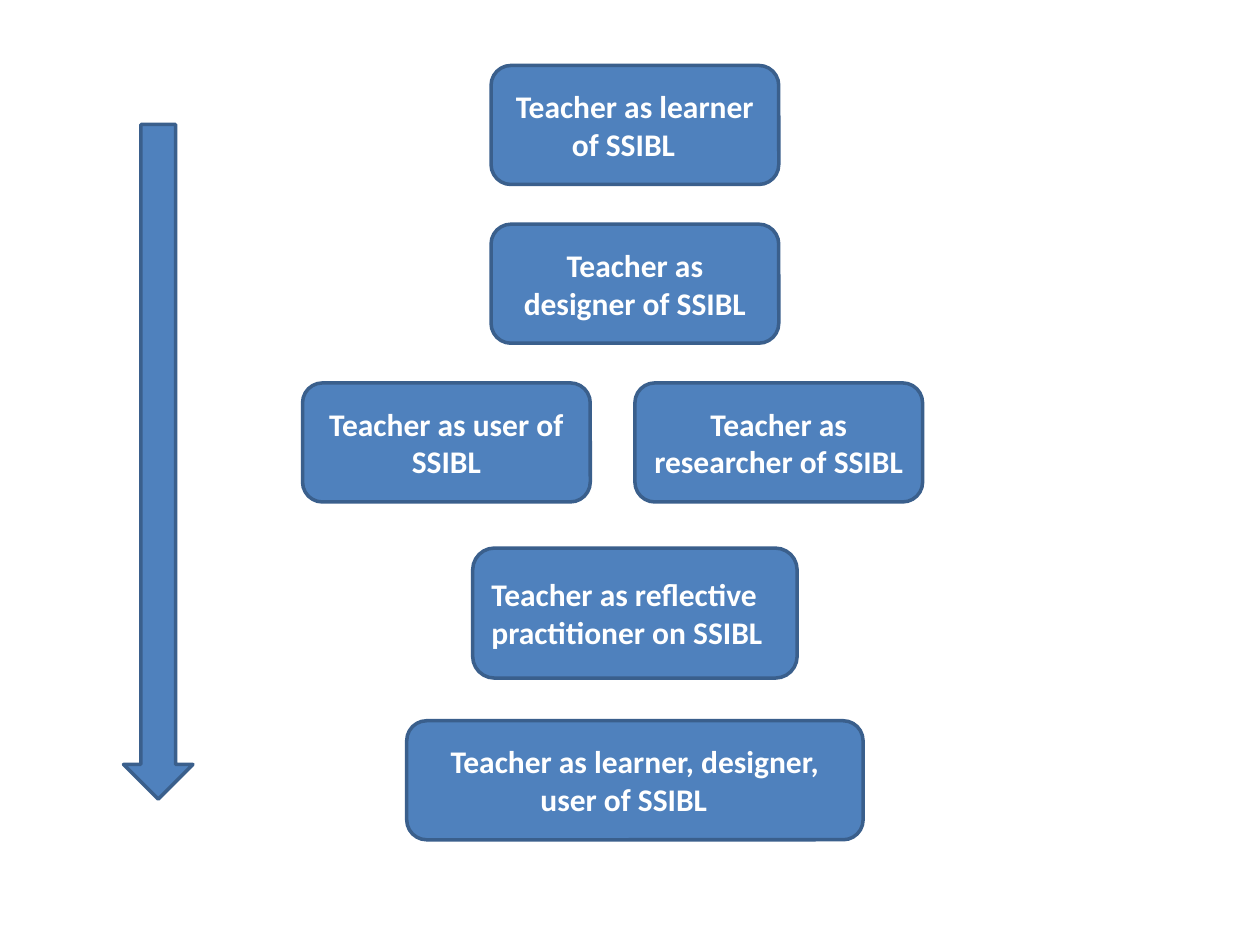
from dataclasses import dataclass

from pptx import Presentation
from pptx import util as u
from pptx.dml.color import RGBColor
from pptx.enum import shapes, text


@dataclass(frozen=True)
class Theme:
    fill: str = "4F81BD"
    outline: str = "3A5F8C"
    ink: str = "FFFFFF"
    font: str = "Calibri"
    size: int = 18
    outline_width: int = 2


class RolePage:
    """Draws teacher roles and the progress arrow on one page in a shared style."""

    def __init__(self, page, theme):
        self.page = page
        self.theme = theme

    def shape(self, kind, left, top, width, height):
        shape = self.page.shapes.add_shape(
            kind, u.Cm(left), u.Cm(top), u.Cm(width), u.Cm(height))
        shape.shadow.inherit = False
        shape.fill.solid()
        shape.fill.fore_color.rgb = RGBColor.from_string(self.theme.fill)
        shape.line.color.rgb = RGBColor.from_string(self.theme.outline)
        shape.line.width = u.Pt(self.theme.outline_width)
        return shape

    def role(self, wording, center, top, width=5.8, height=2.4,
             align=text.PP_ALIGN.CENTER):
        box = self.shape(shapes.MSO_SHAPE.ROUNDED_RECTANGLE,
                         center - width / 2, top, width, height)
        frame = box.text_frame
        frame.word_wrap = True
        frame.vertical_anchor = text.MSO_ANCHOR.MIDDLE
        para = frame.paragraphs[0]
        para.alignment = align
        span = para.add_run()
        span.text = wording
        span.font.name = self.theme.font
        span.font.size = u.Pt(self.theme.size)
        span.font.bold = True
        span.font.color.rgb = RGBColor.from_string(self.theme.ink)

    def arrow(self, left, top, width, height):
        self.shape(shapes.MSO_SHAPE.DOWN_ARROW, left, top, width, height)


def main():
    deck = Presentation()
    deck.slide_width, deck.slide_height = u.Cm(25.4), u.Cm(19.05)
    page = RolePage(deck.slides.add_slide(deck.slide_layouts[6]), Theme())

    axis, first_top, step = 12.8, 1.32, 3.2
    grid_roles = [
        ("Teacher as learner of SSIBL\t", axis, 0),
        ("Teacher as designer of SSIBL", axis, 1),
        ("Teacher as user of SSIBL", 9, 2),
        ("Teacher as researcher of SSIBL", 15.7, 2),
    ]
    for wording, center, row in grid_roles:
        page.role(wording, center, first_top + row * step)
    page.role("Teacher as reflective practitioner on SSIBL", axis, 11.05,
              width=6.54, height=2.62, align=text.PP_ALIGN.LEFT)
    page.role("Teacher as learner, designer, user of SSIBL\t", axis, 14.53,
              width=9.2)
    page.arrow(2.49, 2.51, 1.4, 13.6)

    deck.save("out.pptx")


if __name__ == "__main__":
    main()
